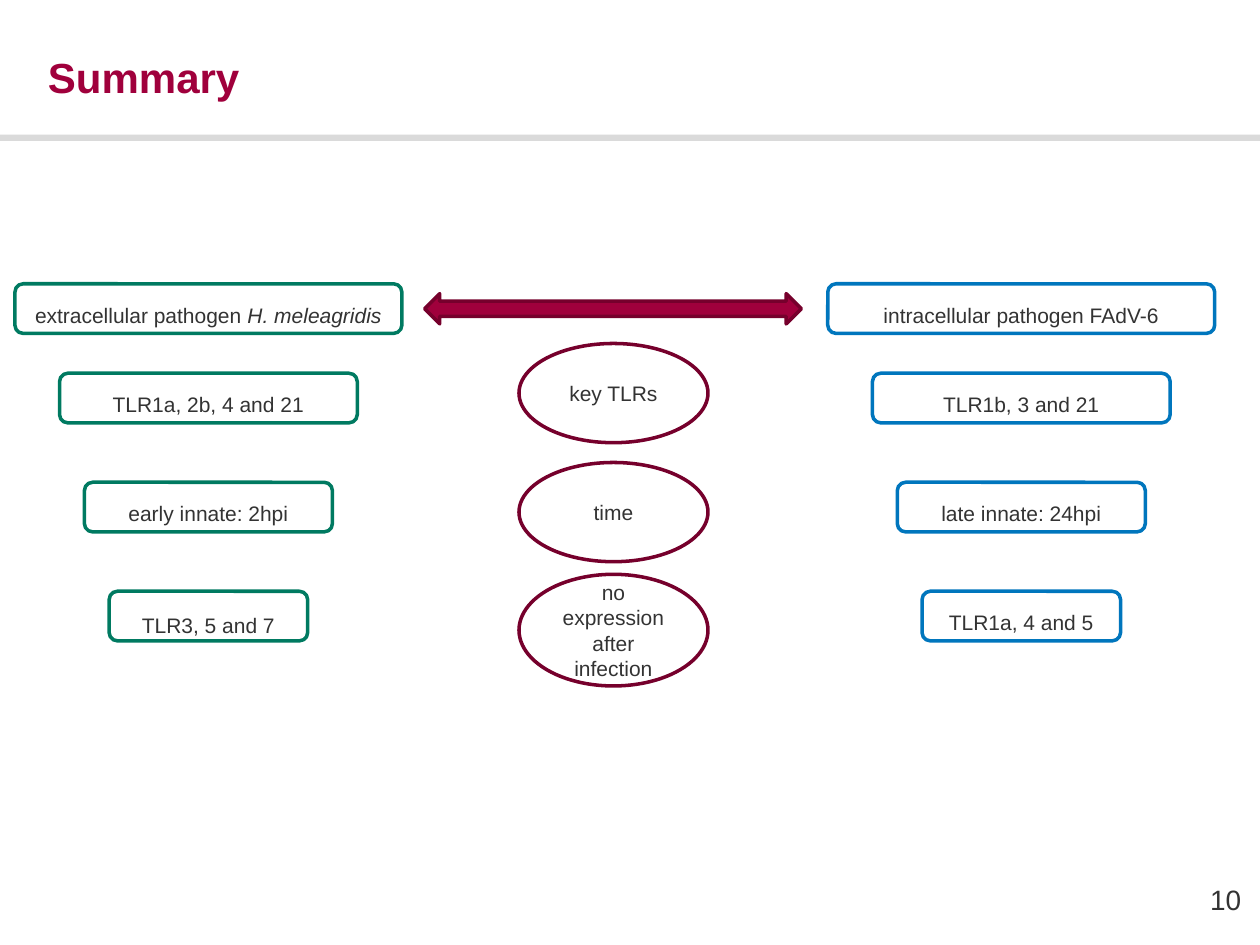
from dataclasses import dataclass

from pptx import Presentation
from pptx import util as u
from pptx.dml.color import RGBColor
from pptx.enum import shapes, text

CRIMSON = RGBColor(0xA0, 0x00, 0x3C)
DARK_RED = RGBColor(0x76, 0x00, 0x2C)
GREEN = RGBColor(0x00, 0x7A, 0x61)
BLUE = RGBColor(0x00, 0x76, 0xBD)
GREY = RGBColor(0xDA, 0xDA, 0xDA)
TEXT = RGBColor(0x33, 0x33, 0x33)

FONT = "Arial"
LEFT_CENTER, MIDDLE_CENTER, RIGHT_CENTER = 119.1, 350.6, 583.6
BOX_HEIGHT = 28.35
OVAL_WIDTH = 108


@dataclass
class Row:
    """One line of the comparison; each text is a list of (words, italic)."""
    top: float
    width: float
    left: list
    right: list
    left_spacing: object = 1.5


@dataclass
class Topic:
    top: float
    height: float
    label: str


ROWS = [
    Row(162.2, 221.1, [("extracellular pathogen ", False), ("H. meleagridis", True)],
        [("intracellular pathogen FAdV-6", False)]),
    Row(213.3, 170.1, [("TLR1a, 2b, 4 and 21", False)], [("TLR1b, 3 and 21", False)]),
    Row(275.6, 141.7, [("early innate: 2hpi", False)], [("late innate: 24hpi", False)]),
    Row(337.9, 113.4, [("TLR3, 5 and 7", False)], [("TLR1a, 4 and 5", False)], u.Pt(25)),
]

TOPICS = [
    Topic(196.3, 56.7, "key TLRs"),
    Topic(264.3, 56.7, "time"),
    Topic(328.2, 63.8, "no expression after infection"),
]


def format_run(run, size: float, color: RGBColor, bold: bool = False,
               italic: bool = False) -> None:
    run.font.name = FONT
    run.font.size = u.Pt(size)
    run.font.bold = bold
    run.font.italic = italic
    run.font.color.rgb = color


def add_shape(slide, kind, left: float, top: float, width: float, height: float,
              fill: RGBColor | None = None, line: RGBColor | None = None):
    shape = slide.shapes.add_shape(kind, u.Pt(left), u.Pt(top), u.Pt(width), u.Pt(height))
    shape.shadow.inherit = False
    if fill is None:
        shape.fill.background()
    else:
        shape.fill.solid()
        shape.fill.fore_color.rgb = fill
    if line is None:
        shape.line.fill.background()
    else:
        shape.line.color.rgb = line
        shape.line.width = u.Pt(2)
    return shape


def add_label(slide, kind, center: float, top: float, width: float, height: float,
              line: RGBColor, parts: list, spacing=1.0) -> None:
    """Draw an outlined shape around a centre line, with centred text."""
    shape = add_shape(slide, kind, center - width / 2, top, width, height, line=line)
    frame = shape.text_frame
    frame.word_wrap = True
    frame.vertical_anchor = text.MSO_ANCHOR.MIDDLE
    paragraph = frame.paragraphs[0]
    paragraph.alignment = text.PP_ALIGN.CENTER
    paragraph.line_spacing = spacing
    for words, italic in parts:
        run = paragraph.add_run()
        run.text = words
        format_run(run, 12, TEXT, italic=italic)


def add_title(slide, words: str) -> None:
    title = slide.shapes.title
    title.left, title.top, title.width, title.height = map(u.Pt, (20.2, 25.9, 566.6, 56.9))
    frame = title.text_frame
    frame.text = words
    frame.auto_size = text.MSO_AUTO_SIZE.NONE
    frame.vertical_anchor = text.MSO_ANCHOR.TOP
    paragraph = frame.paragraphs[0]
    paragraph.alignment = text.PP_ALIGN.LEFT
    format_run(paragraph.runs[0], 24, CRIMSON, bold=True)


def add_page_number(slide, number: str) -> None:
    box = slide.shapes.add_textbox(u.Pt(665.3), u.Pt(499.7), u.Pt(43.9), u.Pt(28.8))
    frame = box.text_frame
    frame.text = number
    frame.word_wrap = True
    frame.margin_left = frame.margin_right = 0
    frame.vertical_anchor = text.MSO_ANCHOR.MIDDLE
    paragraph = frame.paragraphs[0]
    paragraph.alignment = text.PP_ALIGN.RIGHT
    format_run(paragraph.runs[0], 16, TEXT)


def main() -> None:
    presentation = Presentation()
    presentation.slide_width, presentation.slide_height = u.Pt(720), u.Pt(540)
    slide = presentation.slides.add_slide(presentation.slide_layouts[5])
    kinds = shapes.MSO_SHAPE

    # Heading, rule and page number
    add_shape(slide, kinds.RECTANGLE, 0, 77, 720, 3.6, fill=GREY)
    add_title(slide, "Summary")
    add_page_number(slide, "10")

    # Arrow between the two pathogens
    add_shape(slide, kinds.LEFT_RIGHT_ARROW, 242.6, 167.8, 215.3, 17.3,
              fill=CRIMSON, line=DARK_RED)

    # Compared findings, left and right
    for row in ROWS:
        for center, color, parts, spacing in (
                (LEFT_CENTER, GREEN, row.left, row.left_spacing),
                (RIGHT_CENTER, BLUE, row.right, 1.5)):
            add_label(slide, kinds.ROUNDED_RECTANGLE, center, row.top, row.width,
                      BOX_HEIGHT, color, parts, spacing)

    # Topics in the middle
    for topic in TOPICS:
        add_label(slide, kinds.OVAL, MIDDLE_CENTER, topic.top, OVAL_WIDTH,
                  topic.height, DARK_RED, [(topic.label, False)])

    presentation.save("out.pptx")


if __name__ == "__main__":
    main()
